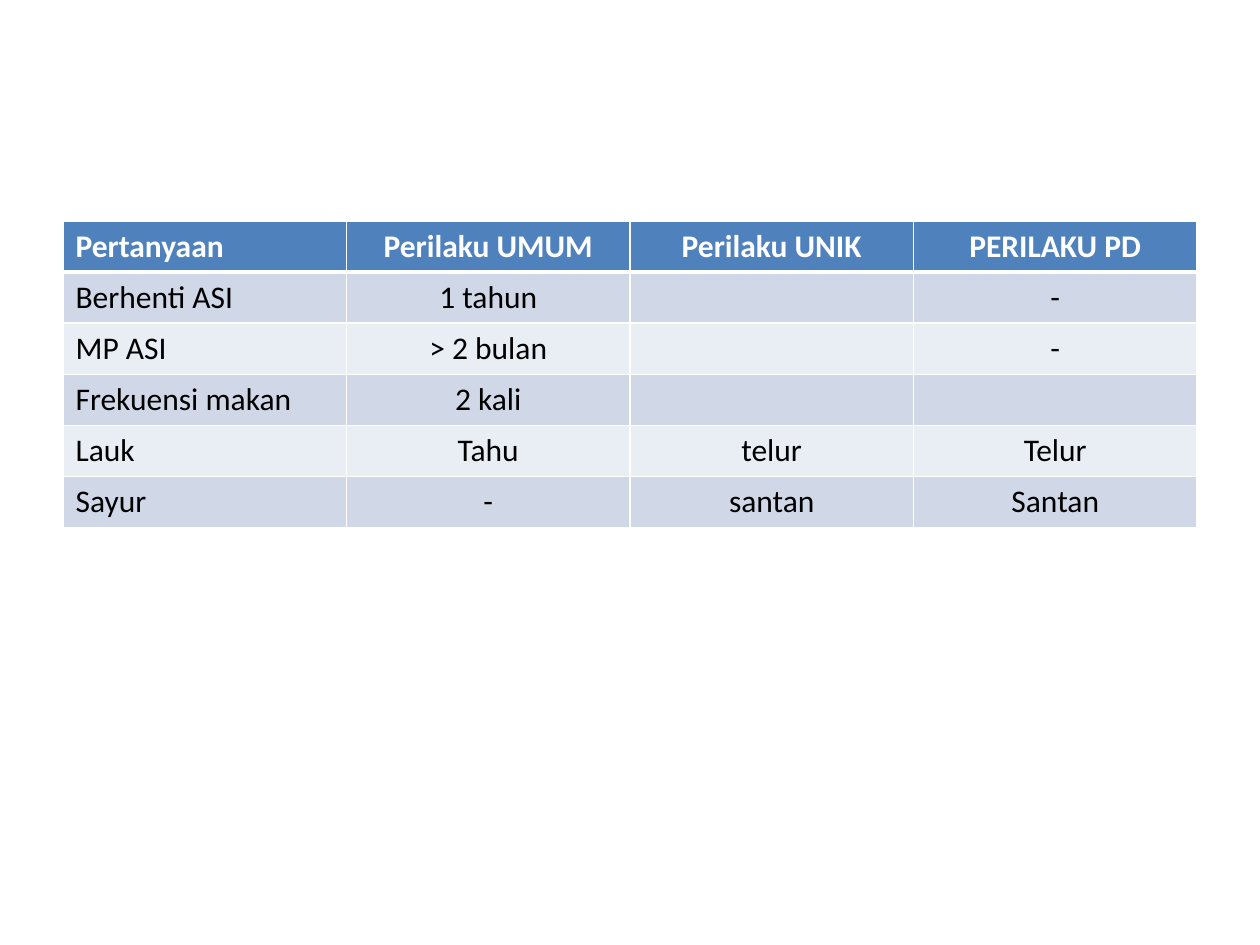
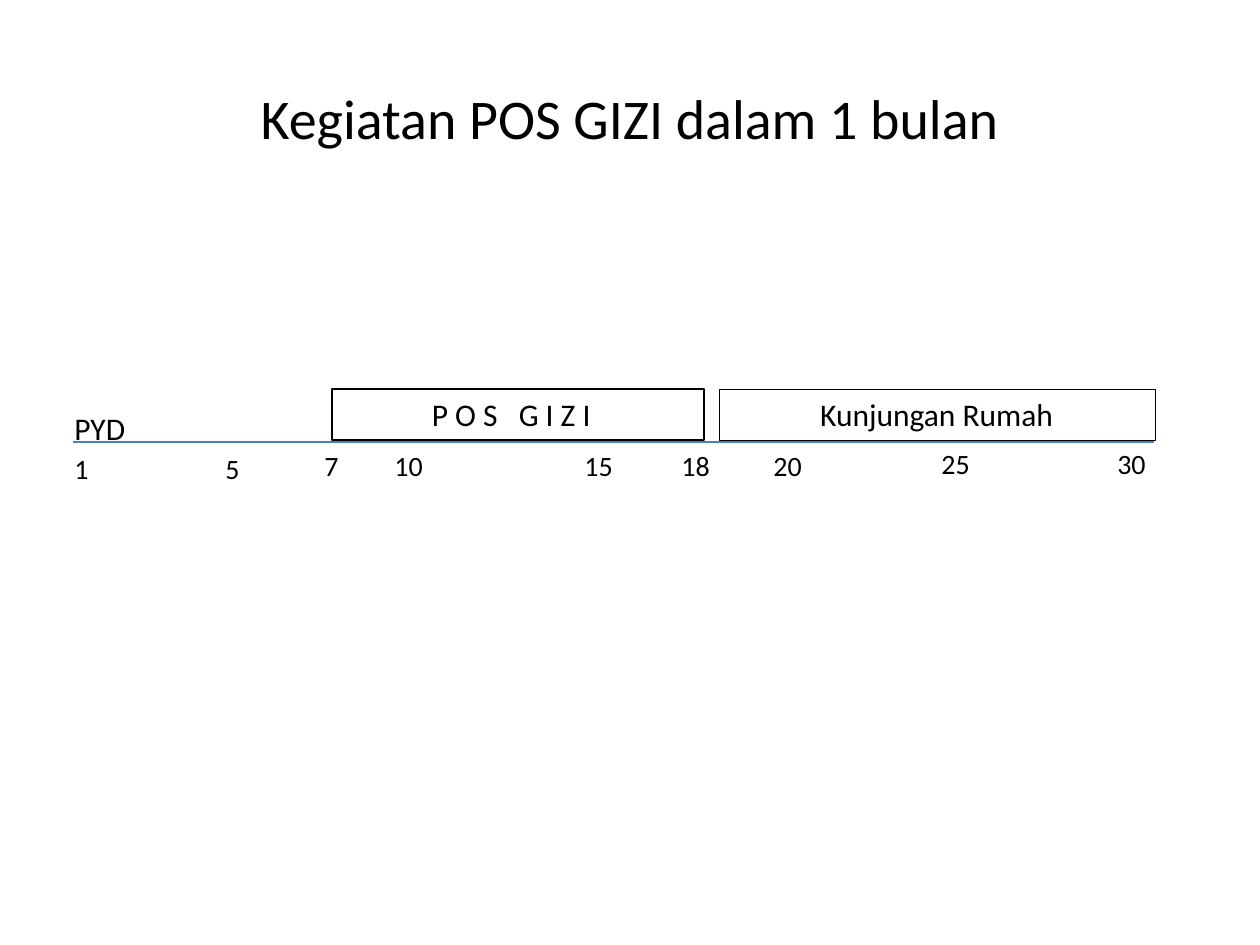
from lxml import etree
from pptx import Presentation
from pptx import util as u
from pptx.dml.color import RGBColor
from pptx.enum import shapes, text
from pptx.oxml.ns import qn

FONT = "Calibri"
BLACK, WHITE = "000000", "FFFFFF"
HEAD, BANDS = "4F81BD", ("D0D8E8", "E9EDF4")
AXIS = "4B7EBC"
LEFT, MID = text.PP_ALIGN.LEFT, text.PP_ALIGN.CENTER

GRID = [
    ("Pertanyaan", "Perilaku UMUM", "Perilaku UNIK", "PERILAKU PD"),
    ("Berhenti ASI", "1 tahun", "", "-"),
    ("MP ASI", "> 2 bulan", "", "-"),
    ("Frekuensi makan", "2 kali", "", ""),
    ("Lauk", "Tahu", "telur", "Telur"),
    ("Sayur", "-", "santan", "Santan"),
]
TABLE = (63, 221, 1134, 306)

TITLE = "Kegiatan POS GIZI dalam 1 bulan"
TITLE_BOX = (63, 38, 1134, 158)
LINE = (73, 442, 1154, 442)
START = ("PYD", (62, 403, 92, 51))
DAYS = [
    ("1", 62, 445, 49), ("5", 213, 445, 49), ("7", 312, 442, 39),
    ("10", 382, 442, 59), ("15", 572, 442, 54), ("18", 669, 442, 69),
    ("20", 761, 442, 69), ("25", 929, 440, 69), ("30", 1105, 440, 60),
]
DAY_H = 46
PHASES = [
    (("P O S", " ", "G I Z I"), (332, 389, 372, 51), 1, 26),
    (("Kunjungan Rumah",), (719, 389, 436, 51), 0.25, 13),
]


def px(n):
    return round(n * 914400 / 126)


def place(box):
    return [px(n) for n in box]


def rgb(code):
    return RGBColor.from_string(code)


def write(frame, *parts, size=18, color=BLACK, bold=False, align=LEFT, gap=0):
    para = frame.paragraphs[0]
    para.alignment = align
    for part in parts:
        run = para.add_run()
        run.text = part
        font = run.font
        font.name, font.size, font.bold = FONT, u.Pt(size), bold
        font.color.rgb = rgb(color)
        if part == " ":
            run._r.get_or_add_rPr().set("spc", str(gap * 100))


def edge(cell, side, width):
    props = cell._tc.get_or_add_tcPr()
    line = etree.Element(qn("a:" + side), w=str(u.Pt(width)))
    fill = etree.SubElement(line, qn("a:solidFill"))
    etree.SubElement(fill, qn("a:srgbClr"), val=WHITE)
    return props, line


def frame_cell(cell, top, base):
    widths = {"lnL": 1, "lnR": 1, "lnT": top, "lnB": base}
    for spot, (side, width) in enumerate(widths.items()):
        props, line = edge(cell, side, width)
        props.insert(spot, line)


def add_grid(slide):
    rows, cols = len(GRID), len(GRID[0])
    table = slide.shapes.add_table(rows, cols, *place(TABLE)).table
    for r, row in enumerate(GRID):
        head = r == 0
        table.rows[r].height = px(TABLE[3] // rows)
        for c, word in enumerate(row):
            cell = table.cell(r, c)
            cell.fill.solid()
            cell.fill.fore_color.rgb = rgb(HEAD if head else BANDS[(r - 1) % 2])
            frame_cell(cell, 3 if r == 1 else 1, 3 if head else 1)
            write(cell.text_frame, word, color=WHITE if head else BLACK,
                  bold=head, align=MID if c else LEFT)


def add_label(slide, word, box, size):
    frame = slide.shapes.add_textbox(*place(box)).text_frame
    frame.word_wrap = True
    write(frame, word, size=size)


def add_phase(slide, words, box, width, inset):
    shape = slide.shapes.add_shape(shapes.MSO_SHAPE.RECTANGLE, *place(box))
    shape.shadow.inherit = False
    shape.fill.background()
    shape.line.color.rgb = rgb(BLACK)
    shape.line.width = u.Pt(width)
    frame = shape.text_frame
    frame.word_wrap = True
    frame.margin_right = px(inset)
    frame.vertical_anchor = text.MSO_ANCHOR.TOP
    write(frame, *words, align=MID, gap=8)


def add_axis(slide):
    line = slide.shapes.add_connector(shapes.MSO_CONNECTOR.STRAIGHT, *place(LINE))
    line.line.color.rgb = rgb(AXIS)
    line.line.width = u.Pt(0.75)
    etree.SubElement(line._element.spPr, qn("a:effectLst"))


def add_title(slide):
    title = slide.shapes.title
    title.left, title.top, title.width, title.height = place(TITLE_BOX)
    title.text_frame.vertical_anchor = text.MSO_ANCHOR.MIDDLE
    write(title.text_frame, TITLE, size=32, align=MID)


def main():
    deck = Presentation()
    deck.slide_width, deck.slide_height = px(1260), px(945)
    add_grid(deck.slides.add_slide(deck.slide_layouts[6]))

    plan = deck.slides.add_slide(deck.slide_layouts[5])
    add_title(plan)
    add_axis(plan)
    for day, x, y, w in DAYS:
        add_label(plan, day, (x, y, w, DAY_H), 16)
    add_label(plan, *START, 18)
    for phase in PHASES:
        add_phase(plan, *phase)
    deck.save("out.pptx")


if __name__ == "__main__":
    main()
